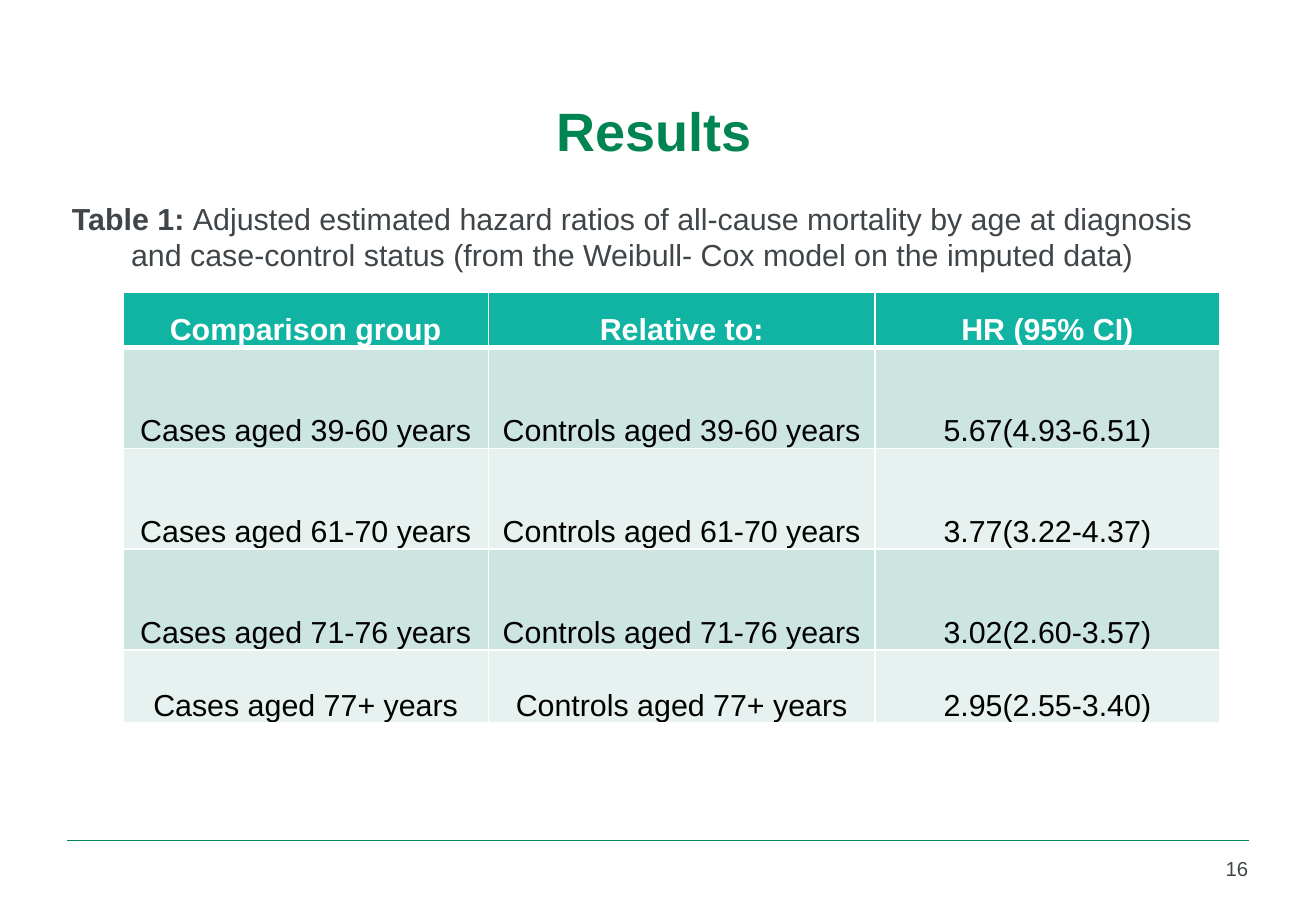
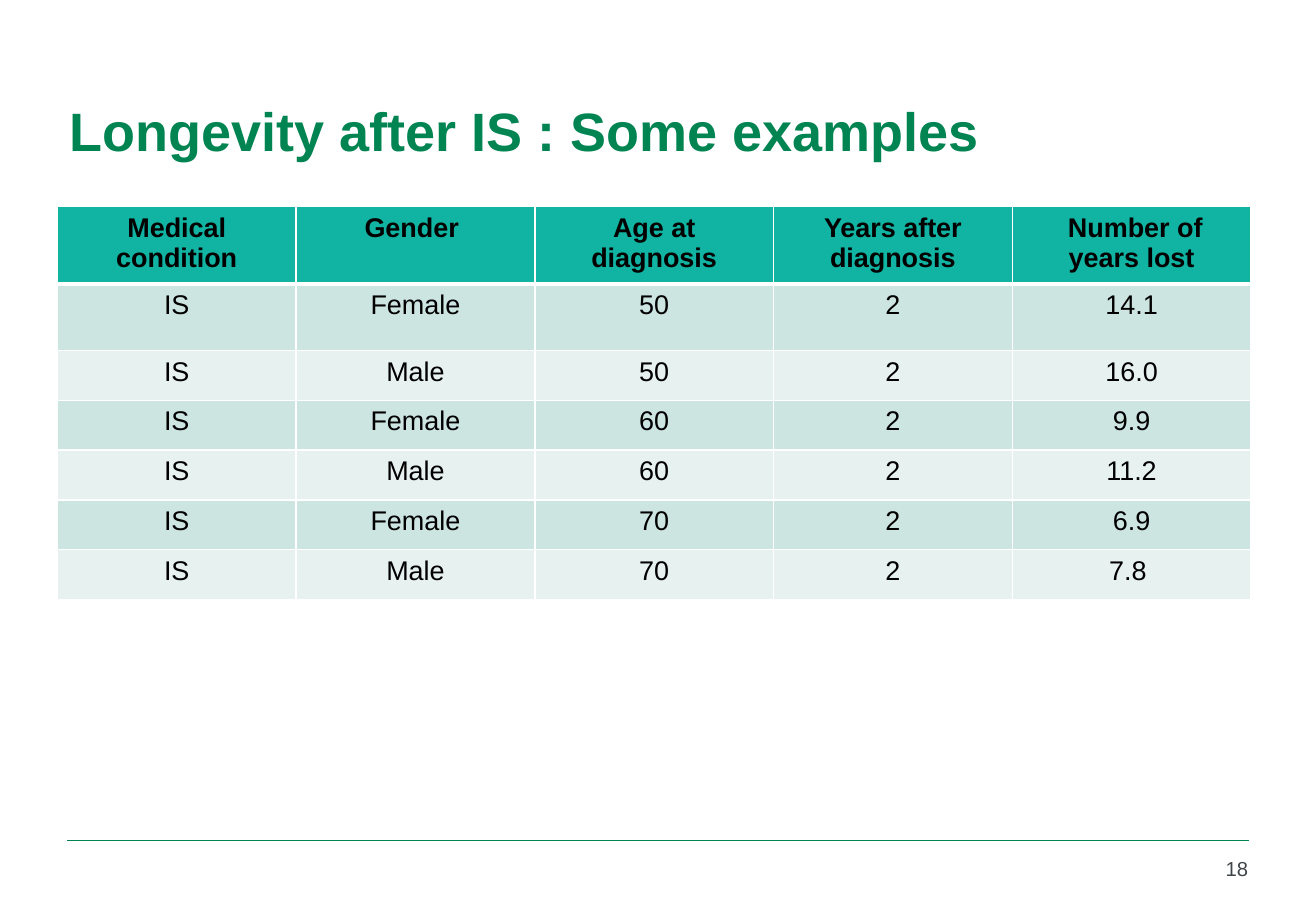
import lxml.etree
import pptx
import pptx.dml.color
import pptx.enum.shapes
import pptx.enum.text
import pptx.oxml.ns
import pptx.util

Cm = pptx.util.Cm
ALIGN = pptx.enum.text.PP_ALIGN
ANCHOR = pptx.enum.text.MSO_ANCHOR

FONT = "Arial"
WHITE = "FFFFFF"
BLACK = "000000"
GREEN = "008452"
GREY = "3F4548"
HEADER_FILL = "11B3A2"
BAND_FILLS = ["CCE5E0", "E7F2F0"]

slides = [
    {
        "title": "Results",
        "title_align": ALIGN.CENTER,
        "number": "16",
        "left": 2.57,
        "top": 6.12,
        "columns": [7.64, 8.08, 7.21],
        "row_heights": [0.99, 2.11, 2.11, 2.11, 1.52],
        "margins": (0.18, 0),
        "anchor": ANCHOR.BOTTOM,
        "line_spacing": 1.5,
        "size": 18,
        "header_colour": WHITE,
        "rows": [
            ["Comparison group", "Relative to:", "HR (95% CI)"],
            ["Cases aged 39-60 years", "Controls aged 39-60 years", "5.67(4.93-6.51)"],
            ["Cases aged 61-70 years", "Controls aged 61-70 years", "3.77(3.22-4.37)"],
            ["Cases aged 71-76 years", "Controls aged 71-76 years", "3.02(2.60-3.57)"],
            ["Cases aged 77+ years", "Controls aged 77+ years", "2.95(2.55-3.40)"],
        ],
        "caption": [
            [("Table 1: ", True),
             ("Adjusted estimated hazard ratios of all-cause mortality by age at diagnosis ", False)],
            [("and case-control status (from the Weibull- Cox model on the imputed data) ", False)],
        ],
    },
    {
        "title": "Longevity after IS : Some examples",
        "title_align": ALIGN.LEFT,
        "number": "18",
        "left": 1.2,
        "top": 4.32,
        "columns": [4.99] * 5,
        "row_heights": [1.04, 1.4] + [1.04] * 5,
        "margins": (0.25, 0.13),
        "anchor": ANCHOR.TOP,
        "line_spacing": 1,
        "size": 16,
        "header_colour": BLACK,
        "rows": [
            ["Medical condition", "Gender ", "Age at diagnosis",
             "Years after diagnosis", " Number of years lost"],
            ["IS", "Female", "50", "2", "14.1"],
            ["IS", "Male", "50", "2", "16.0"],
            ["IS", "Female", "60", "2", "9.9"],
            ["IS", "Male", "60", "2", "11.2"],
            ["IS", "Female", "70", "2", "6.9"],
            ["IS", "Male", "70", "2", "7.8 "],
        ],
        "caption": [],
    },
]


def rgb(colour):
    return pptx.dml.color.RGBColor.from_string(colour)


def write(paragraph, pieces, size, colour, align):
    """Fill a paragraph with (text, bold) pieces in one size and colour."""
    paragraph.alignment = align
    for text, bold in pieces:
        run = paragraph.add_run()
        run.text = text
        run.font.name = FONT
        run.font.size = pptx.util.Pt(size)
        run.font.bold = bold
        run.font.color.rgb = rgb(colour)


presentation = pptx.Presentation()
presentation.slide_width = Cm(27.51)
presentation.slide_height = Cm(19.05)

for content in slides:
    slide = presentation.slides.add_slide(presentation.slide_layouts[6])

    # Footer rule
    rule = slide.shapes.add_connector(
        pptx.enum.shapes.MSO_CONNECTOR.STRAIGHT, Cm(1.4), Cm(17.58), Cm(26.11), Cm(17.58))
    rule.line.color.rgb = rgb(GREEN)
    rule.line.width = pptx.util.Pt(1)
    lxml.etree.SubElement(rule.element.spPr, pptx.oxml.ns.qn("a:effectLst"))

    # Title
    title = slide.shapes.add_textbox(Cm(1.2), Cm(1.12), Cm(24.94), Cm(3.18))
    title.text_frame.word_wrap = True
    title.text_frame.vertical_anchor = ANCHOR.MIDDLE
    write(title.text_frame.paragraphs[0], [(content["title"], True)], 32, GREEN,
          content["title_align"])

    # Table
    rows, columns, heights = content["rows"], content["columns"], content["row_heights"]
    table = slide.shapes.add_table(
        len(rows), len(columns), Cm(content["left"]), Cm(content["top"]),
        Cm(sum(columns)), Cm(sum(heights))).table
    table.horz_banding = False
    for column, width in zip(table.columns, columns):
        column.width = Cm(width)
    for row, height in zip(table.rows, heights):
        row.height = Cm(height)
    side_margin, end_margin = content["margins"]
    for row_index, row in enumerate(rows):
        is_header = row_index == 0
        fill = HEADER_FILL if is_header else BAND_FILLS[(row_index - 1) % 2]
        colour = content["header_colour"] if is_header else BLACK
        for column_index, text in enumerate(row):
            cell = table.cell(row_index, column_index)
            cell.margin_left = cell.margin_right = Cm(side_margin)
            cell.margin_top = cell.margin_bottom = Cm(end_margin)
            cell.vertical_anchor = content["anchor"]
            properties = cell._tc.get_or_add_tcPr()
            for edge in ["lnL", "lnR", "lnT", "lnB"]:
                under_header = (row_index, edge) in [(0, "lnB"), (1, "lnT")]
                border = lxml.etree.SubElement(
                    properties, pptx.oxml.ns.qn("a:" + edge),
                    w=str(pptx.util.Pt(3 if under_header else 1)))
                border_fill = lxml.etree.SubElement(border, pptx.oxml.ns.qn("a:solidFill"))
                lxml.etree.SubElement(border_fill, pptx.oxml.ns.qn("a:srgbClr"), val=WHITE)
            cell.fill.solid()
            cell.fill.fore_color.rgb = rgb(fill)
            paragraph = cell.text_frame.paragraphs[0]
            paragraph.line_spacing = float(content["line_spacing"])
            write(paragraph, [(text, is_header)], content["size"], colour, ALIGN.CENTER)

    # Slide number
    number = slide.shapes.add_textbox(Cm(24.38), Cm(17.78), Cm(1.96), Cm(0.94))
    number.text_frame.word_wrap = True
    write(number.text_frame.paragraphs[0], [(content["number"], False)], 12, GREY, ALIGN.RIGHT)

    # Table caption
    if content["caption"]:
        caption = slide.shapes.add_textbox(Cm(1.14), Cm(4.06), Cm(24.33), Cm(2.57))
        caption.text_frame.word_wrap = False
        caption.text_frame.auto_size = pptx.enum.text.MSO_AUTO_SIZE.SHAPE_TO_FIT_TEXT
        for line_index, pieces in enumerate(content["caption"]):
            frame = caption.text_frame
            paragraph = frame.add_paragraph() if line_index else frame.paragraphs[0]
            write(paragraph, pieces, 18, GREY, ALIGN.CENTER)

presentation.save("out.pptx")
